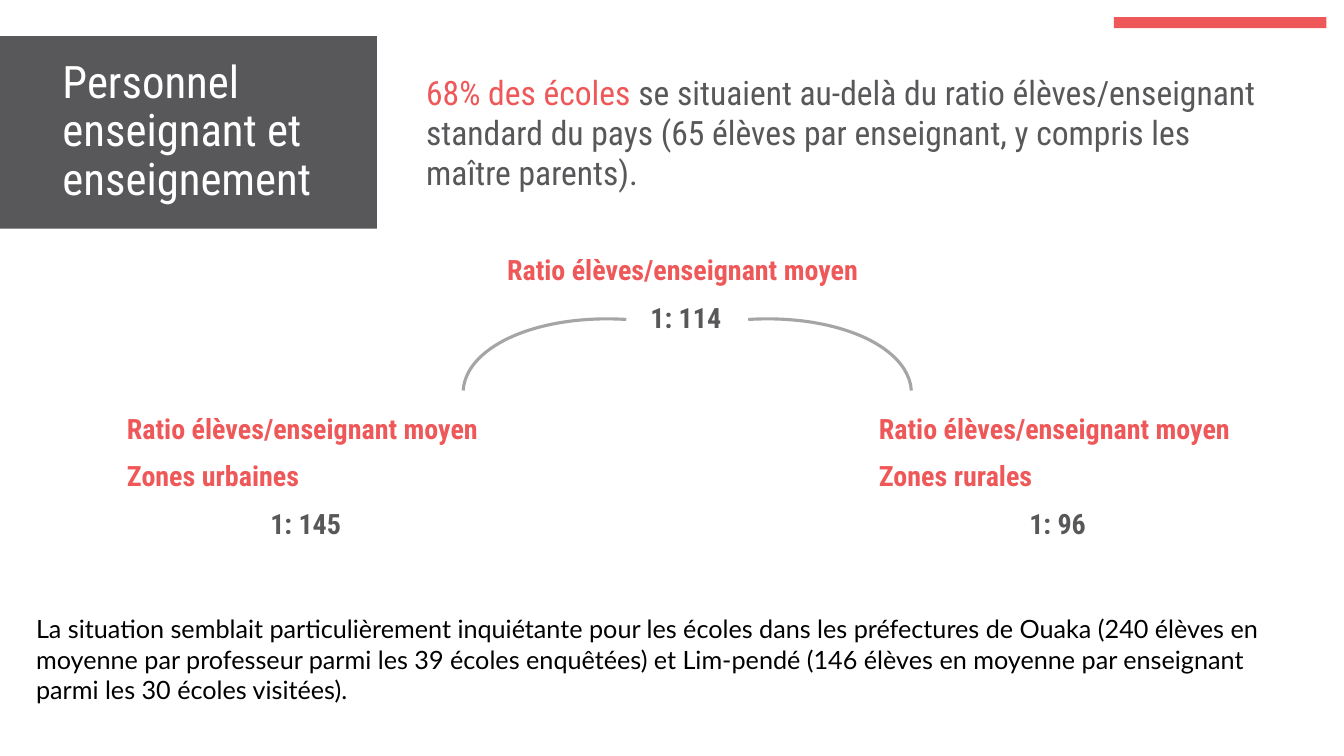
"""Build the slide on pupil to teacher ratios."""
from dataclasses import dataclass
from typing import Any

import pptx
import pptx.dml.color
import pptx.enum.shapes
import pptx.enum.text
import pptx.util

Cm = pptx.util.Cm
Align = pptx.enum.text.PP_ALIGN
Anchor = pptx.enum.text.MSO_ANCHOR
Fit = pptx.enum.text.MSO_AUTO_SIZE
Shape = pptx.enum.shapes.MSO_SHAPE

RED, GREY, LINE = "EE5859", "58585A", "A5A5A5"
FONT = "Roboto Condensed"
LABEL = "Ratio élèves/enseignant moyen"


@dataclass
class Block:
    left: float
    top: float
    width: float
    height: float
    color: str


@dataclass
class Ratio:
    left: float
    top: float
    heads: list[str]
    value: str


@dataclass
class Arc:
    left: float
    turn: float
    flip: bool


BLOCKS = [
    Block(0, 0.91, 9.5, 4.85, GREY),
    Block(28.07, 0.43, 5.36, 0.28, RED),
]
RATIOS = [
    Ratio(12.6, 6.27, [LABEL], "1: 114"),
    Ratio(3.02, 10.26, [LABEL, "Zones urbaines"], "1: 145"),
    Ratio(21.97, 10.26, [LABEL, "Zones rurales"], "1: 96"),
]
ARCS = [Arc(13.61, 273.6, False), Arc(16.94, 86.4, True)]


def tint(code: str) -> pptx.dml.color.RGBColor:
    return pptx.dml.color.RGBColor.from_string(code)


def write(para: Any, text: str, *, size: float, color: str,
          font: str = FONT, bold: bool = False) -> None:
    run = para.add_run()
    run.text = text
    run.font.name = font
    run.font.size = pptx.util.Pt(size)
    run.font.bold = bold
    run.font.color.rgb = tint(color)


def frame(slide: Any, left: float, top: float, width: float, height: float) -> Any:
    box = slide.shapes.add_textbox(Cm(left), Cm(top), Cm(width), Cm(height))
    box.text_frame.word_wrap = True
    return box.text_frame


def draw_block(slide: Any, block: Block) -> None:
    shape = slide.shapes.add_shape(
        Shape.RECTANGLE, Cm(block.left), Cm(block.top),
        Cm(block.width), Cm(block.height))
    shape.shadow.inherit = False
    shape.fill.solid()
    shape.fill.fore_color.rgb = tint(block.color)
    shape.line.fill.background()


def draw_title(slide: Any, text: str) -> None:
    title = slide.shapes.title
    title.left, title.top = Cm(1.32), Cm(1.14)
    title.width, title.height = Cm(7.9), Cm(4.39)
    body = title.text_frame
    body.word_wrap = True
    body.auto_size = Fit.NONE
    body.vertical_anchor = Anchor.MIDDLE
    para = body.paragraphs[0]
    para.alignment = Align.LEFT
    para.line_spacing = 0.9
    write(para, text, size=32, color="FFFFFF")
    slide.shapes._spTree.append(title._element)


def draw_ratio(slide: Any, ratio: Ratio) -> None:
    body = frame(slide, ratio.left, ratio.top, 9.37, 1.4)
    body.margin_left = body.margin_right = Cm(0.18)
    body.margin_top = body.margin_bottom = Cm(0.1)
    para = body.paragraphs[0]
    for head in ratio.heads:
        write(para, head, size=20, color=RED, bold=True)
        para = body.add_paragraph()
        para.space_before = pptx.util.Pt(10)
    para.alignment = Align.CENTER
    write(para, ratio.value, size=20, color=GREY, bold=True)


def draw_arc(slide: Any, arc: Arc) -> None:
    shape = slide.shapes.add_shape(
        Shape.ARC, Cm(arc.left), Cm(6.1), Cm(4.09), Cm(7.98))
    shape.shadow.inherit = False
    shape.fill.background()
    shape.line.color.rgb = tint(LINE)
    shape.line.width = pptx.util.Pt(2.25)
    shape.rotation = arc.turn
    if arc.flip:
        shape._element.spPr.xfrm.set("flipH", "1")


def main() -> None:
    deck = pptx.Presentation()
    deck.slide_width, deck.slide_height = Cm(33.87), Cm(19.05)
    slide = deck.slides.add_slide(deck.slide_layouts[5])
    for block in BLOCKS:
        draw_block(slide, block)
    draw_title(slide, "Personnel enseignant et enseignement")

    intro = frame(slide, 10.49, 1.68, 22.05, 3.33)
    intro.auto_size = Fit.SHAPE_TO_FIT_TEXT
    para = intro.paragraphs[0]
    write(para, "68% des écoles ", size=24, color=RED)
    write(para, "se situaient au-delà du ratio élèves/enseignant standard du "
          "pays (65 élèves par enseignant, y compris les maître parents).",
          size=24, color=GREY)

    for ratio in RATIOS:
        draw_ratio(slide, ratio)

    note = frame(slide, 0.66, 15.34, 32.54, 2.57)
    note.auto_size = Fit.SHAPE_TO_FIT_TEXT
    write(note.paragraphs[0],
          "La situation semblait particulièrement inquiétante pour les écoles "
          "dans les préfectures de Ouaka (240 élèves en moyenne par professeur "
          "parmi les 39 écoles enquêtées) et Lim-pendé (146 élèves en moyenne "
          "par enseignant parmi les 30 écoles visitées).",
          size=18, color="000000", font="Lato")

    for arc in ARCS:
        draw_arc(slide, arc)
    deck.save("out.pptx")


if __name__ == "__main__":
    main()
